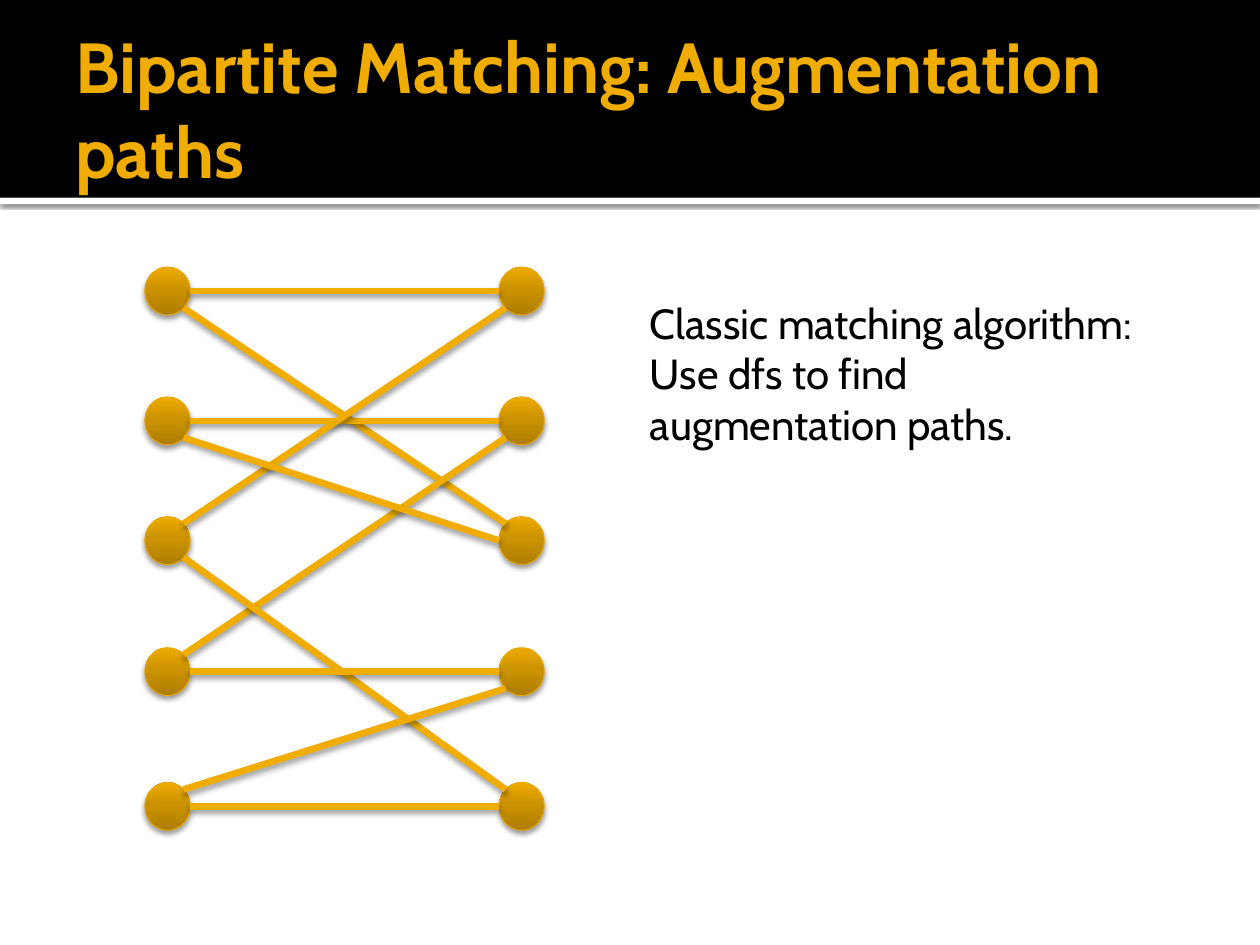
"""Build a slide on augmentation paths in bipartite matching."""
from copy import deepcopy
from math import sqrt

from lxml import etree
from pptx import Presentation
from pptx.dml.color import RGBColor
from pptx.enum.shapes import MSO_CONNECTOR, MSO_SHAPE
from pptx.enum.text import MSO_ANCHOR
from pptx.oxml.ns import qn
from pptx.util import Inches, Pt

RECT, OVAL = MSO_SHAPE.RECTANGLE, MSO_SHAPE.OVAL
LINE = MSO_CONNECTOR.STRAIGHT
TOP, MIDDLE = MSO_ANCHOR.TOP, MSO_ANCHOR.MIDDLE
BLACK = RGBColor(0x00, 0x00, 0x00)
WHITE = RGBColor(0xFF, 0xFF, 0xFF)
GOLD = RGBColor(0xF0, 0xAD, 0x00)
RIM = RGBColor(0xEB, 0xA9, 0x00)
STOPS = [
    (0, RGBColor(0xAE, 0x7D, 0x00)),
    (0.55, RGBColor(0xCC, 0x93, 0x00)),
    (1, RGBColor(0xEE, 0xAB, 0x00)),
]
FONT = "Cabin"
WIDE, HIGH = 0.36, 0.38
LEFT, RIGHT = 1.33, 4.14
ROWS = [2.31, 3.34, 4.29, 5.33, 6.4]
EDGES = [(0, 0), (0, 2), (3, 1), (4, 4), (1, 1),
         (2, 4), (3, 3), (4, 3), (2, 0), (1, 2)]


def add_shadow(shape, alpha, blur, dist):
    """Give a shape a soft black shadow below it."""
    props = shape._element.spPr
    effects = etree.SubElement(props, qn("a:effectLst"))
    outer = etree.SubElement(
        effects, qn("a:outerShdw"), blurRad=str(Pt(blur)), dist=str(Pt(dist)),
        dir="5400000", algn="ctr", rotWithShape="0")
    color = etree.SubElement(outer, qn("a:srgbClr"), val=str(BLACK))
    etree.SubElement(color, qn("a:alpha"), val=str(alpha * 1000))


def add_band(slide, top, height, color):
    """Add a plain band across the slide."""
    band = slide.shapes.add_shape(
        RECT, 0, Inches(top), Inches(10), Inches(height))
    band.fill.solid()
    band.fill.fore_color.rgb = color
    band.line.fill.background()
    return band


def add_text(slide, text, box, size=24, color=BLACK, bold=False,
             anchor=TOP, right=0.1):
    """Add a text box with one paragraph per line of text."""
    frame = slide.shapes.add_textbox(*map(Inches, box)).text_frame
    frame.word_wrap = True
    frame.vertical_anchor = anchor
    frame.margin_right = Inches(right)
    frame.text = text
    for para in frame.paragraphs:
        font = para.font
        font.name, font.size, font.bold = FONT, Pt(size), bold
        font.color.rgb = color


def add_node(slide, x, y):
    """Add a graph node centred on a point."""
    node = slide.shapes.add_shape(
        OVAL, Inches(x - WIDE / 2), Inches(y - HIGH / 2),
        Inches(WIDE), Inches(HIGH))
    node.fill.gradient()
    node.fill.gradient_angle = 90
    stops = node._element.spPr.find(".//" + qn("a:gsLst"))
    stops.insert(1, deepcopy(stops[0]))
    for stop, (place, color) in zip(node.fill.gradient_stops, STOPS):
        stop.position = place
        stop.color.rgb = color
    node.line.color.rgb = RIM
    node.line.width = Pt(0.5)
    add_shadow(node, 38, 3.1, 2)


def add_edge(slide, start, end):
    """Join a left node to a right node, rim to rim."""
    slope = (end > start) - (end < start)
    part = 1 / sqrt(2) if slope else 1
    dx, dy = WIDE / 2 * part, HIGH / 2 * part * slope
    if (start, end) == (1, 2):
        tip = RIGHT - WIDE / 2, ROWS[end]
    else:
        tip = RIGHT - dx, ROWS[end] - dy
    points = LEFT + dx, ROWS[start] + dy, *tip
    edge = slide.shapes.add_connector(LINE, *map(Inches, points))
    edge.line.color.rgb = GOLD
    edge.line.width = Pt(3.78)
    add_shadow(edge, 38, 3.5, 2)


def main():
    """Build and save the slide."""
    deck = Presentation()
    deck.slide_width, deck.slide_height = Inches(10), Inches(7.5)
    slide = deck.slides.add_slide(deck.slide_layouts[6])
    add_shadow(add_band(slide, 1.57, 0.05, WHITE), 60, 2.5, 0.8)
    add_band(slide, 0, 1.57, BLACK).shadow.inherit = False
    add_text(slide, "Bipartite Matching: Augmentation paths",
             (0.5, 0.17, 9, 1.37), size=40.5, color=GOLD, bold=True,
             anchor=MIDDLE, right=0.05)
    for y in ROWS:
        for x in (LEFT, RIGHT):
            add_node(slide, x, y)
    for start, end in EDGES:
        add_edge(slide, start, end)
    add_text(slide, "Classic matching algorithm:\n"
             "Use dfs to find augmentation paths.", (5.06, 2.31, 4.15, 1.31))
    deck.save("out.pptx")


if __name__ == "__main__":
    main()
